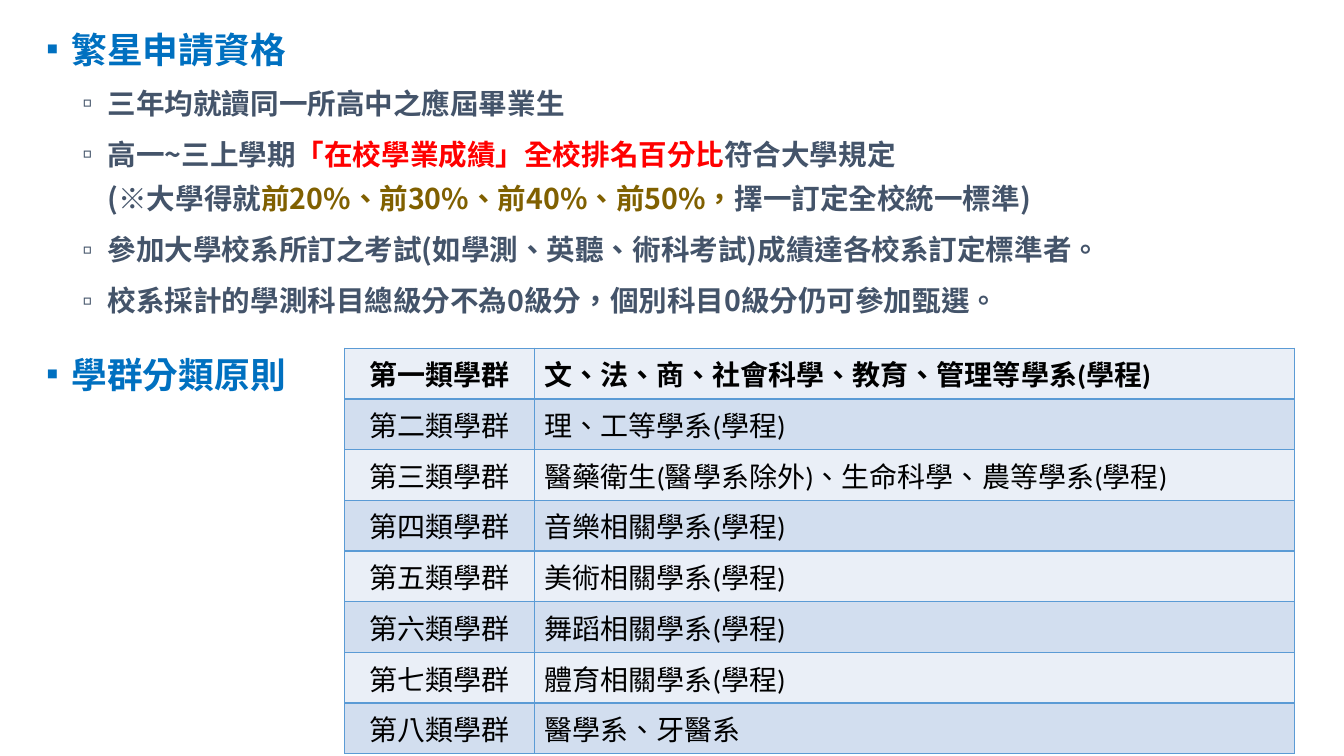
from lxml import etree
from pptx import Presentation
from pptx.dml.color import RGBColor
from pptx.enum.lang import MSO_LANGUAGE_ID
from pptx.enum.text import MSO_ANCHOR, PP_ALIGN
from pptx.oxml.ns import qn
from pptx.util import Pt

CENTER, LEFT = PP_ALIGN.CENTER, PP_ALIGN.LEFT
MIDDLE = MSO_ANCHOR.MIDDLE
CHINESE = MSO_LANGUAGE_ID.TRADITIONAL_CHINESE
CJK_FONT = "Noto Sans CJK SC"
COLORS = {
    "heading": "0070C0", "body": "44546A", "ranking": "FF0000",
    "percent": "806000", "black": "000000", "border": "5B9BD5",
    "light": "EAEFF7", "dark": "D2DEEF",
}


def add_text(paragraph, text, size=20.4, color="body", bold=True, font=CJK_FONT):
    """Add a run to the paragraph; a newline becomes a line break."""
    for number, line in enumerate(text.split("\n")):
        if number:
            paragraph.add_line_break()
        run = paragraph.add_run()
        run.text = line
        run.font.size = Pt(size)
        run.font.bold = bold
        run.font.name = font
        run.font.language_id = CHINESE
        run.font.color.rgb = RGBColor.from_string(COLORS[color])
        east_asian = etree.Element(qn("a:ea"), typeface=CJK_FONT)
        run.font._element.find(qn("a:latin")).addnext(east_asian)


prs = Presentation()
prs.slide_width, prs.slide_height = Pt(960), Pt(540)
slide = prs.slides.add_slide(prs.slide_layouts[6])

# Outline: level, space before, runs of text and colour
outline = [
    (0, 0, [("繁星申請資格", "heading")]),
    (1, 4.5, [("三年均就讀同一所高中之應屆畢業生", "body")]),
    (1, 4.5, [
        ("高一~三上學期", "body"),
        ("「在校學業成績」全校排名百分比", "ranking"),
        ("符合大學規定\n(※大學得就", "body"),
        ("前20%、前30%、前40%、前50%，", "percent"),
        ("擇一訂定全校統一標準)", "body"),
    ]),
    (1, 4.5, [("參加大學校系所訂之考試(如學測、英聽、術科考試)成績達各校系訂定標準者。", "body")]),
    (1, 4.5, [("校系採計的學測科目總級分不為0級分，個別科目0級分仍可參加甄選。", "body")]),
    (0, 33.6, [("學群分類原則", "heading")]),
]
# Per level: bullet, left margin, line spacing, text size
levels = [("▪", 32.4, 0.7, 25.5), ("▫", 58.3, 1.3, 20.4)]

eligibility = slide.shapes.add_textbox(Pt(11.5), Pt(24.5), Pt(905), Pt(278)).text_frame
eligibility.word_wrap = True
for index, (level, space_before, runs) in enumerate(outline):
    bullet, margin, line_spacing, size = levels[level]
    paragraph = eligibility.add_paragraph() if index else eligibility.paragraphs[0]
    properties = paragraph._p.get_or_add_pPr()
    properties.set("marL", str(Pt(margin)))
    properties.set("indent", str(Pt(-18)))
    etree.SubElement(properties, qn("a:buFont"), typeface="Arial")
    etree.SubElement(properties, qn("a:buChar"), char=bullet)
    paragraph.level = level
    paragraph.line_spacing = line_spacing
    paragraph.space_before = Pt(space_before)
    for text, color in runs:
        add_text(paragraph, text, size=size, color=color)

# Table of department groups
groups = [
    ("第一類學群", "文、法、商、社會科學、教育、管理等學系(學程)"),
    ("第二類學群", "理、工等學系(學程)"),
    ("第三類學群", "醫藥衛生(醫學系除外)、生命科學、農等學系(學程)"),
    ("第四類學群", "音樂相關學系(學程)"),
    ("第五類學群", "美術相關學系(學程)"),
    ("第六類學群", "舞蹈相關學系(學程)"),
    ("第七類學群", "體育相關學系(學程)"),
    ("第八類學群", "醫學系、牙醫系"),
]
group_table = slide.shapes.add_table(
    len(groups), 2, Pt(246.2), Pt(248.8), Pt(678.3), Pt(289.8)).table
group_table.columns[0].width = Pt(135.4)
group_table.columns[1].width = Pt(542.9)

for row, group in enumerate(groups):
    for column, text in enumerate(group):
        cell = group_table.cell(row, column)
        cell.vertical_anchor = MIDDLE
        cell_properties = cell._tc.get_or_add_tcPr()
        for side in ("a:lnL", "a:lnR", "a:lnT", "a:lnB"):
            border = etree.SubElement(cell_properties, qn(side), w=str(Pt(1)))
            border_fill = etree.SubElement(border, qn("a:solidFill"))
            etree.SubElement(border_fill, qn("a:srgbClr"), val=COLORS["border"])
        cell.fill.solid()
        cell.fill.fore_color.rgb = RGBColor.from_string(
            COLORS["dark" if row % 2 else "light"])
        paragraph = cell.text_frame.paragraphs[0]
        paragraph.alignment = LEFT if column else CENTER
        add_text(paragraph, text, size=20, color="black", bold=row == 0, font="Calibri")

prs.save("out.pptx")
